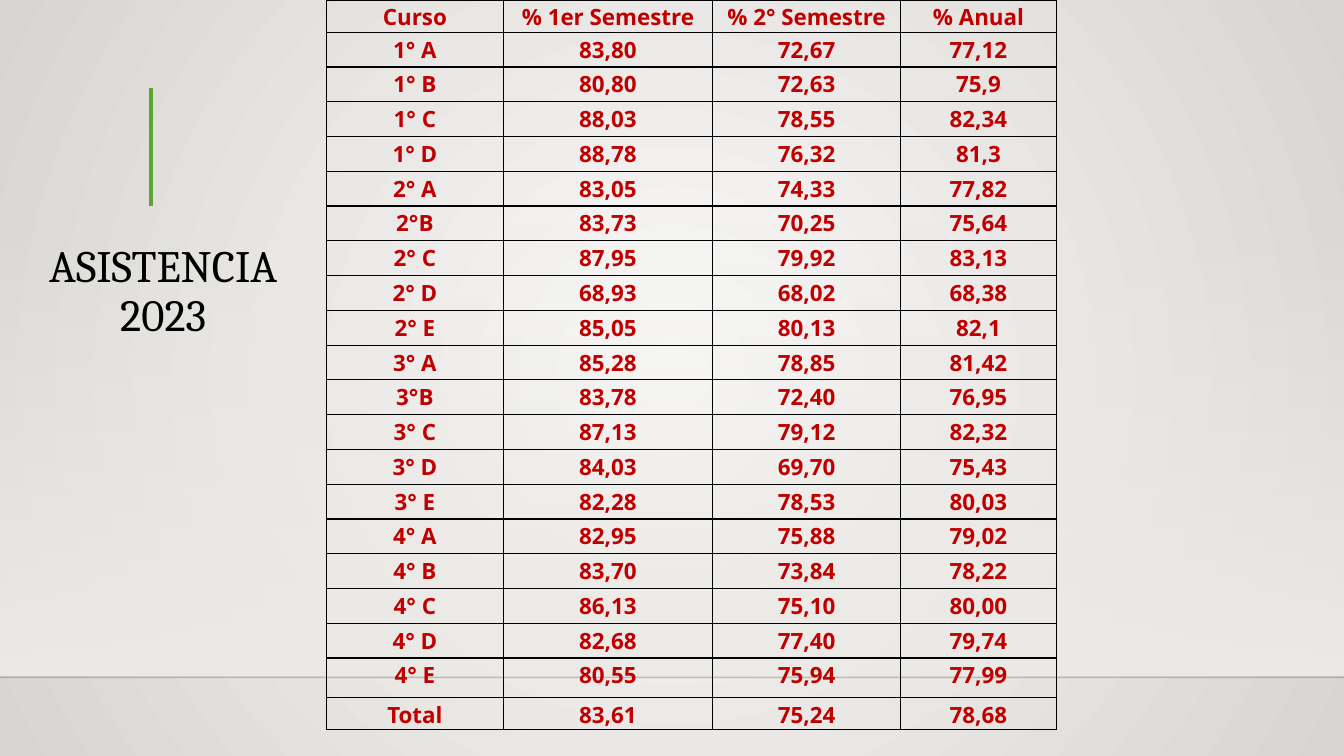
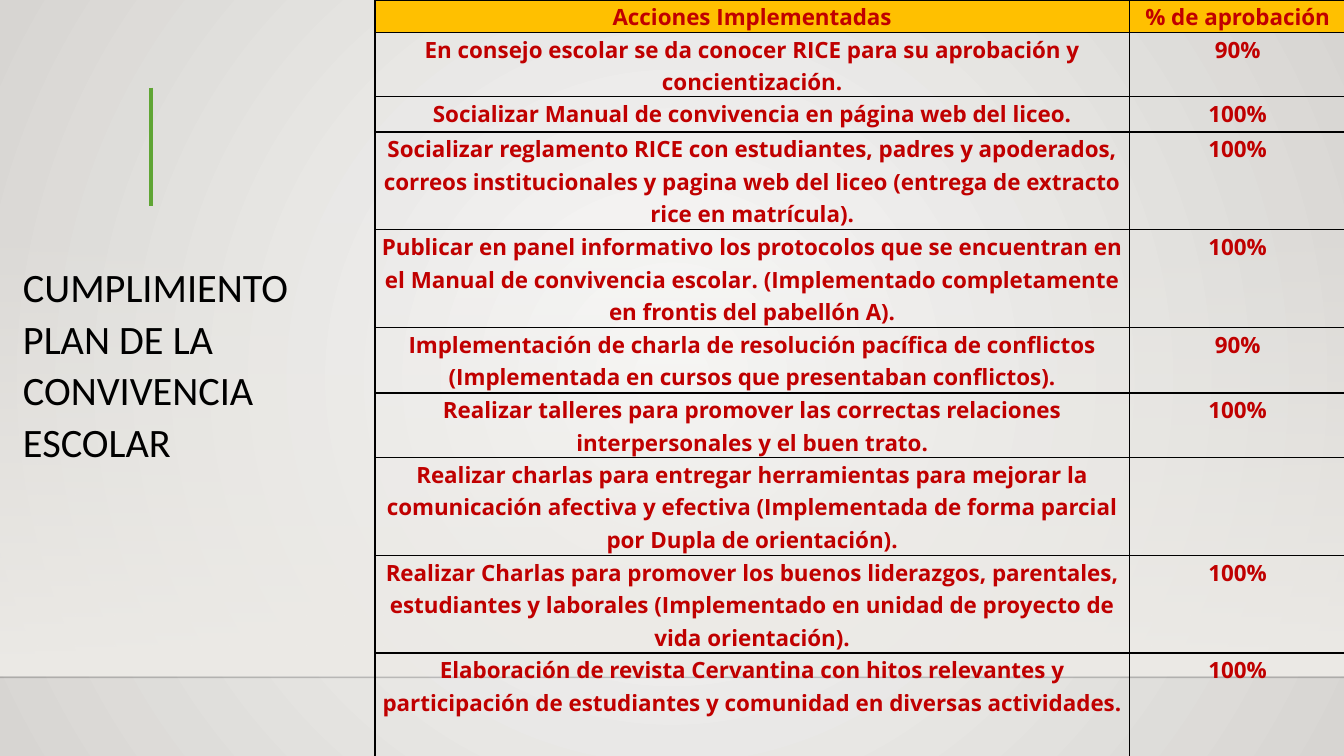
from dataclasses import dataclass

from lxml import etree
from pptx import Presentation
from pptx.dml.color import RGBColor
from pptx.enum.shapes import MSO_CONNECTOR, MSO_SHAPE
from pptx.enum.text import MSO_ANCHOR, PP_ALIGN
from pptx.oxml.ns import qn
from pptx.util import Inches, Pt

STRAIGHT = MSO_CONNECTOR.STRAIGHT
RECTANGLE = MSO_SHAPE.RECTANGLE
BOTTOM = MSO_ANCHOR.BOTTOM
LEFT, CENTER = PP_ALIGN.LEFT, PP_ALIGN.CENTER


@dataclass(frozen=True)
class Theme:
    glow: str = "FAFAF9"
    edge: str = "D7D5D2"
    floor: str = "EDEBE7"
    horizon: str = "000001"
    accent: str = "5FA534"
    ink: str = "000000"
    table_text: str = "C00000"
    header_fill: str = "FFC000"
    table_font: str = "Open Sans"
    attendance_font: str = "Cambria"
    actions_font: str = "Calibri"
    table_size: float = 16
    attendance_size: float = 32
    actions_size: float = 28.8
    line_spacing: float = 1.07
    border: float = 1


THEME = Theme()
SLIDE_WIDTH, SLIDE_HEIGHT = 13.33, 7.5

ATTENDANCE = [
    ("Curso", "% 1er Semestre", "% 2° Semestre", "% Anual"),
    ("1° A", "83,80", "72,67", "77,12"),
    ("1° B", "80,80", "72,63", "75,9"),
    ("1° C", "88,03", "78,55", "82,34"),
    ("1° D", "88,78", "76,32", "81,3"),
    ("2° A", "83,05", "74,33", "77,82"),
    ("2°B", "83,73", "70,25", "75,64"),
    ("2° C", "87,95", "79,92", "83,13"),
    ("2° D", "68,93", "68,02", "68,38"),
    ("2° E", "85,05", "80,13", "82,1"),
    ("3° A", "85,28", "78,85", "81,42"),
    ("3°B", "83,78", "72,40", "76,95"),
    ("3° C", "87,13", "79,12", "82,32"),
    ("3° D", "84,03", "69,70", "75,43"),
    ("3° E", "82,28", "78,53", "80,03"),
    ("4° A", "82,95", "75,88", "79,02"),
    ("4° B", "83,70", "73,84", "78,22"),
    ("4° C", "86,13", "75,10", "80,00"),
    ("4° D", "82,68", "77,40", "79,74"),
    ("4° E", "80,55", "75,94", "77,99"),
    ("Total", "83,61", "75,24", "78,68"),
]

ACTIONS = [
    ("Acciones Implementadas", "% de aprobación"),
    ("En consejo escolar se da conocer RICE para su aprobación y concientización.", "90%"),
    ("Socializar Manual de convivencia en página web del liceo.", "100%"),
    ("Socializar reglamento RICE con estudiantes, padres y apoderados, correos "
     "institucionales y pagina web del liceo (entrega de extracto rice en matrícula).", "100%"),
    ("Publicar en panel informativo los protocolos que se encuentran en el Manual de "
     "convivencia escolar. (Implementado completamente en frontis del pabellón A).", "100%"),
    ("Implementación de charla de resolución pacífica de conflictos "
     "(Implementada en cursos que presentaban conflictos).", "90%"),
    ("Realizar talleres para promover las correctas relaciones interpersonales "
     "y el buen trato.", "100%"),
    ("Realizar charlas para entregar herramientas para mejorar la comunicación afectiva "
     "y efectiva (Implementada de forma parcial por Dupla de orientación).", ""),
    ("Realizar Charlas para promover los buenos liderazgos, parentales, estudiantes y "
     "laborales (Implementado en unidad de proyecto de vida orientación).", "100%"),
    ("Elaboración de revista Cervantina con hitos relevantes y participación de "
     "estudiantes y comunidad en diversas actividades.", "100%"),
]


def add_child(parent, tag, **attributes):
    child = etree.SubElement(parent, qn(tag))
    for name, value in attributes.items():
        child.set(name, str(value))
    return child


def set_gradient(owner, stops, radial=False):
    gradient = owner.find(".//" + qn("a:gradFill"))
    for child in list(gradient):
        gradient.remove(child)
    stop_list = add_child(gradient, "a:gsLst")
    for position, color, opacity in stops:
        stop = add_child(stop_list, "a:gs", pos=position * 1000)
        shade = add_child(stop, "a:srgbClr", val=color)
        if opacity < 100:
            add_child(shade, "a:alpha", val=opacity * 1000)
    if radial:
        circle = add_child(gradient, "a:path", path="circle")
        add_child(circle, "a:fillToRect", l=50000, t=50000, r=50000, b=50000)
    else:
        add_child(gradient, "a:lin", ang=5400000, scaled=0)


def add_line(page, start, end, color, width, opacity=100):
    line = page.shapes.add_connector(STRAIGHT, *(Inches(v) for v in start + end))
    line.line.color.rgb = RGBColor.from_string(color)
    line.line.width = Pt(width)
    properties = line._element.spPr
    if opacity < 100:
        shade = properties.find(".//" + qn("a:srgbClr"))
        add_child(shade, "a:alpha", val=opacity * 1000)
    add_child(properties, "a:effectLst")


def write_text(frame, text, *, font, size, color, bold=False, align=CENTER, spacing=1.0):
    para = frame.paragraphs[0]
    para.alignment = align
    para.line_spacing = spacing
    para.space_before = para.space_after = Pt(0)
    for index, line in enumerate(text.split("\n")):
        if index:
            para.add_line_break()
        span = para.add_run()
        span.text = line
        span.font.name = font
        span.font.size = Pt(size)
        span.font.bold = bold
        span.font.color.rgb = RGBColor.from_string(color)


def add_title(page, box, text, **text_format):
    title = page.shapes.add_textbox(*(Inches(v) for v in box))
    title.text_frame.word_wrap = True
    title.text_frame.vertical_anchor = BOTTOM
    write_text(title.text_frame, text, color=THEME.ink, **text_format)


def set_borders(cell):
    properties = cell._tc.get_or_add_tcPr()
    for index, side in enumerate(("L", "R", "T", "B")):
        border = add_child(properties, f"a:ln{side}", w=Pt(THEME.border))
        add_child(add_child(border, "a:solidFill"), "a:srgbClr", val=THEME.ink)
        properties.insert(index, border)


def add_grid(page, corner, widths, heights, rows, margin, header_fill=None):
    box = (*corner, sum(widths), sum(heights))
    frame = page.shapes.add_table(len(rows), len(widths), *(Inches(v) for v in box))
    table = frame.table
    table.first_row = table.horz_banding = False
    for column, width in zip(table.columns, widths):
        column.width = Inches(width)
    for row_index, (row, height, texts) in enumerate(zip(table.rows, heights, rows)):
        row.height = Inches(height)
        for cell, text in zip(row.cells, texts):
            cell.margin_left = cell.margin_right = Inches(margin)
            cell.margin_top = cell.margin_bottom = 0
            if header_fill and row_index == 0:
                cell.fill.solid()
                cell.fill.fore_color.rgb = RGBColor.from_string(header_fill)
            else:
                cell.fill.background()
            set_borders(cell)
            if text:
                write_text(cell.text_frame, text, font=THEME.table_font, size=THEME.table_size,
                           color=THEME.table_text, bold=True, spacing=THEME.line_spacing)


def set_background(deck):
    master = deck.slide_master
    master.background.fill.gradient()
    set_gradient(master.element, [(0, THEME.glow, 100), (100, THEME.edge, 100)], radial=True)


def add_page(deck):
    page = deck.slides.add_slide(deck.slide_layouts[6])
    floor = page.shapes.add_shape(RECTANGLE, 0, Inches(2.2), Inches(SLIDE_WIDTH), Inches(4.5))
    floor.shadow.inherit = False
    floor.line.fill.background()
    floor.fill.gradient()
    set_gradient(floor._element.spPr, [(0, THEME.floor, 0), (100, THEME.floor, 100)])
    add_line(page, (0, 6.72), (SLIDE_WIDTH, 6.72), THEME.horizon, 1, opacity=20)
    add_line(page, (1.5, 0.87), (1.5, 2.04), THEME.accent, 3)
    return page


def build_attendance(deck):
    page = add_page(deck)
    add_title(page, (0, 2.06, 3.24, 1.37), "ASISTENCIA 2023",
              font=THEME.attendance_font, size=THEME.attendance_size, spacing=0.9)
    course_height = 6.21 / 18
    heights = [0.32] + [course_height] * 18 + [0.39, 0.32]
    add_grid(page, (3.24, 0), [1.75, 2.08, 1.86, 1.55], heights, ATTENDANCE, margin=0.07)


def build_actions(deck):
    page = add_page(deck)
    add_title(page, (0.13, 2.25, 3, 2.42),
              "CUMPLIMIENTO\nPLAN DE LA\nCONVIVENCIA\nESCOLAR",
              font=THEME.actions_font, size=THEME.actions_size, align=LEFT,
              spacing=THEME.line_spacing)
    heights = [0.32, 0.64, 0.35, 0.97, 0.97, 0.65, 0.64, 0.97, 0.97, 1.05]
    add_grid(page, (3.72, 0), [7.48, 2.15], heights, ACTIONS, margin=0.04,
             header_fill=THEME.header_fill)


def main():
    deck = Presentation()
    deck.slide_width, deck.slide_height = Inches(SLIDE_WIDTH), Inches(SLIDE_HEIGHT)
    set_background(deck)
    build_attendance(deck)
    build_actions(deck)
    deck.save("out.pptx")


if __name__ == "__main__":
    main()
